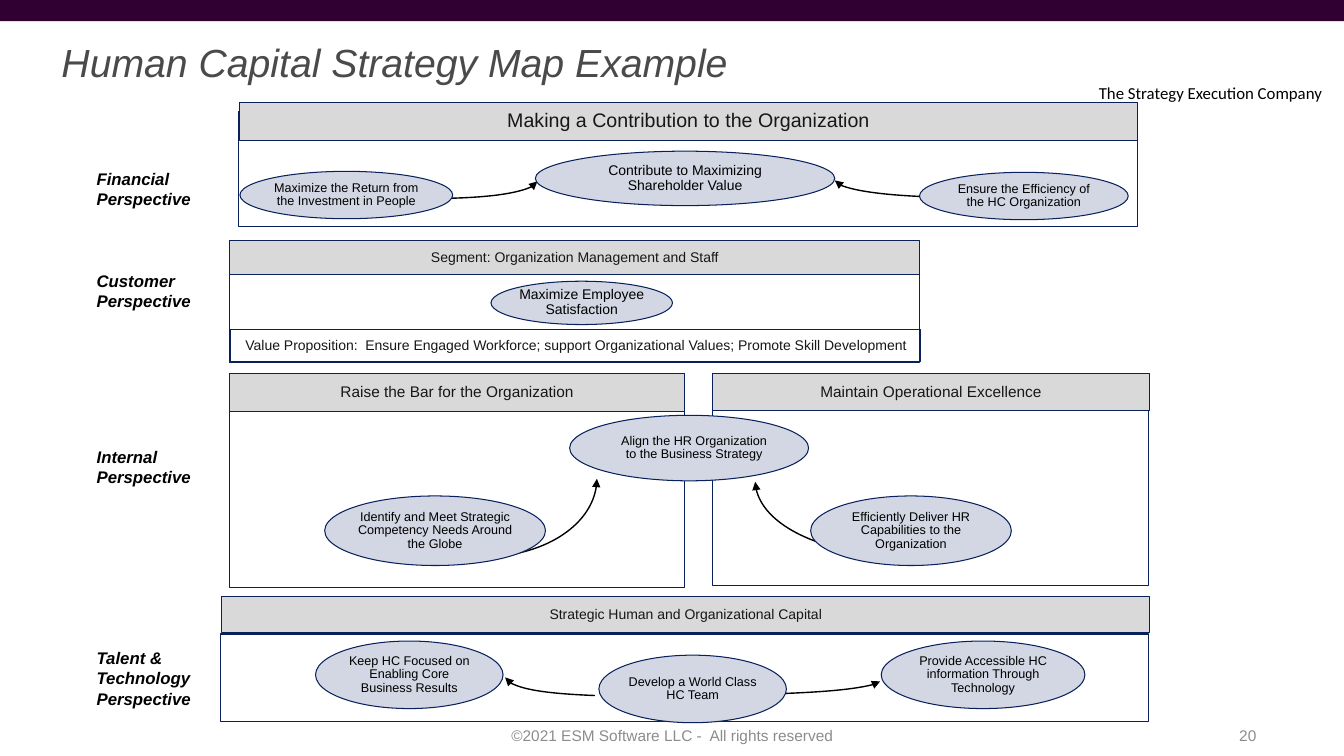
from dataclasses import dataclass
from typing import Optional

from lxml.etree import SubElement
from pptx import Presentation
from pptx.dml.color import RGBColor
from pptx.enum.dml import MSO_LINE
from pptx.enum.shapes import MSO_SHAPE
from pptx.enum.text import MSO_ANCHOR, MSO_AUTO_SIZE, PP_ALIGN
from pptx.oxml.ns import qn
from pptx.shapes.autoshape import Shape
from pptx.slide import Slide
from pptx.util import Pt

PX = 9144  # 100 px to the inch

BLACK = RGBColor(0x00, 0x00, 0x00)
PLUM = RGBColor(0x31, 0x00, 0x32)
NAVY = RGBColor(0x08, 0x20, 0x5C)
LAVENDER = RGBColor(0xD3, 0xD6, 0xE3)
HEADER_GRAY = RGBColor(0xD9, 0xD9, 0xD9)
HEADER_TEXT = RGBColor(0x18, 0x17, 0x17)
TITLE_GRAY = RGBColor(0x4A, 0x4A, 0x4A)
FOOTER_GRAY = RGBColor(0x8C, 0x8C, 0x8C)

Box = tuple[int, int, int, int]
Point = tuple[int, int]


@dataclass(frozen=True)
class TextStyle:
    size: int
    color: RGBColor = BLACK
    font: str = "Arial"
    bold: bool = False
    italic: bool = False
    align: PP_ALIGN = PP_ALIGN.LEFT
    anchor: MSO_ANCHOR = MSO_ANCHOR.TOP
    spacing: float = 1.0
    insets: Box = (10, 5, 10, 5)


@dataclass(frozen=True)
class Panel:
    box: Box


@dataclass(frozen=True)
class Band:
    box: Box
    text: str
    size: int = 10
    fill: Optional[RGBColor] = HEADER_GRAY


@dataclass(frozen=True)
class Objective:
    box: Box
    text: str
    size: int = 9
    left_inset: int = 0


@dataclass(frozen=True)
class Arrow:
    """A Bezier curve: start, two controls, end."""
    start: Point
    control_1: Point
    control_2: Point
    end: Point


@dataclass(frozen=True)
class Caption:
    box: Box
    text: str
    style: TextStyle


TITLE = TextStyle(28, TITLE_GRAY, italic=True, spacing=0.9)
PERSPECTIVE = TextStyle(12, bold=True, italic=True)

PANELS = [
    Panel((237, 111, 891, 114)),
    Panel((228, 240, 684, 120)),
    Panel((228, 400, 451, 183)),
    Panel((707, 396, 432, 185)),
    Panel((219, 629, 920, 87)),
]
BANDS = [
    Band((238, 102, 890, 37), "Making a Contribution to the Organization", 14),
    Band((228, 239, 684, 33), "Segment: Organization Management and Staff"),
    Band((229, 327, 684, 32), "Value Proposition:  Ensure Engaged Workforce; support "
         "Organizational Values; Promote Skill Development", fill=None),
    Band((228, 371, 451, 37), "Raise the Bar for the Organization", 11),
    Band((707, 371, 433, 36), "Maintain Operational Excellence", 11),
    Band((220, 592, 920, 36), "Strategic Human and Organizational Capital"),
]
ARROWS = [
    Arrow((423, 197), (484, 197), (533, 189), (533, 180)),
    Arrow((966, 196), (890, 196), (828, 188), (828, 179)),
    Arrow((474, 553), (539, 553), (592, 518), (592, 475)),
    Arrow((880, 552), (804, 545), (750, 514), (749, 478)),
    Arrow((590, 690), (539, 688), (502, 681), (501, 672)),
    Arrow((777, 688), (830, 686), (873, 680), (873, 676)),
]
OBJECTIVES = [
    Objective((238, 170, 211, 47), "Maximize the Return from the Investment in People"),
    Objective((531, 150, 297, 54), "Contribute to Maximizing Shareholder Value", 10),
    Objective((912, 171, 207, 47), "Ensure the Efficiency of the HC Organization"),
    Objective((487, 279, 180, 43), "Maximize Employee Satisfaction", 10),
    Objective((565, 412, 237, 65), "Align the HR Organization to the Business Strategy",
              left_inset=10),
    Objective((322, 492, 219, 69),
              "Identify and Meet Strategic Competency Needs Around the Globe"),
    Objective((804, 492, 199, 69), "Efficiently Deliver HR Capabilities to the Organization"),
    Objective((313, 636, 186, 67), "Keep HC Focused on Enabling Core Business Results"),
    Objective((594, 650, 186, 67), "Develop a World Class HC Team"),
    Objective((874, 636, 202, 67), "Provide Accessible HC information Through Technology"),
]
CAPTIONS = [
    Caption((86, 162, 147, 50), "Financial Perspective", PERSPECTIVE),
    Caption((86, 264, 147, 50), "Customer Perspective", PERSPECTIVE),
    Caption((86, 438, 158, 50), "Internal Perspective", PERSPECTIVE),
    Caption((86, 638, 158, 70), "Talent & Technology Perspective", PERSPECTIVE),
    Caption((1080, 77, 253, 30), "The Strategy Execution Company",
            TextStyle(12, font="Calibri")),
    Caption((442, 710, 450, 40), "©2021 ESM Software LLC -  All rights reserved",
            TextStyle(11, FOOTER_GRAY, align=PP_ALIGN.CENTER, anchor=MSO_ANCHOR.MIDDLE)),
    Caption((956, 710, 300, 40), "20",
            TextStyle(11, FOOTER_GRAY, align=PP_ALIGN.RIGHT, anchor=MSO_ANCHOR.MIDDLE)),
]


def set_attributes(target: object, values: dict[str, object]) -> None:
    for name, value in values.items():
        setattr(target, name, value)


def to_emu(box: Box) -> list[int]:
    return [length * PX for length in box]


def write_text(shape: Shape, text: str, style: TextStyle) -> None:
    frame = shape.text_frame
    frame.text = text
    left, top, right, bottom = to_emu(style.insets)
    set_attributes(frame, {
        "word_wrap": True, "auto_size": MSO_AUTO_SIZE.NONE, "vertical_anchor": style.anchor,
        "margin_left": left, "margin_top": top, "margin_right": right, "margin_bottom": bottom,
    })
    paragraph = frame.paragraphs[0]
    set_attributes(paragraph, {"alignment": style.align, "line_spacing": style.spacing})
    font = paragraph.runs[0].font
    set_attributes(font, {"name": style.font, "size": Pt(style.size),
                          "bold": style.bold, "italic": style.italic})
    font.color.rgb = style.color


def add_block(slide: Slide, kind: MSO_SHAPE, box: Box, fill: Optional[RGBColor] = None,
              line: Optional[RGBColor] = NAVY) -> Shape:
    shape = slide.shapes.add_shape(kind, *to_emu(box))
    shape.shadow.inherit = False
    if fill is None:
        shape.fill.background()
    else:
        shape.fill.solid()
        shape.fill.fore_color.rgb = fill
    if line is None:
        shape.line.fill.background()
    else:
        shape.line.color.rgb = line
        shape.line.width = Pt(0.75)
    return shape


def add_band(slide: Slide, band: Band) -> None:
    shape = add_block(slide, MSO_SHAPE.RECTANGLE, band.box, band.fill)
    write_text(shape, band.text, TextStyle(
        band.size, HEADER_TEXT, align=PP_ALIGN.CENTER, anchor=MSO_ANCHOR.MIDDLE,
        spacing=0.9, insets=(5, 5, 5, 5)))


def add_objective(slide: Slide, objective: Objective) -> None:
    shape = add_block(slide, MSO_SHAPE.OVAL, objective.box, LAVENDER)
    write_text(shape, objective.text, TextStyle(
        objective.size, align=PP_ALIGN.CENTER, anchor=MSO_ANCHOR.MIDDLE,
        spacing=0.9, insets=(objective.left_inset, 3, 0, 3)))


def add_arrow(slide: Slide, arrow: Arrow) -> None:
    """Turn the three segments of an open freeform into one cubic curve."""
    builder = slide.shapes.build_freeform(*arrow.start, scale=PX)
    builder.add_line_segments([arrow.control_1, arrow.control_2, arrow.end], close=False)
    shape = builder.convert_to_shape()
    outline = next(shape.element.iter(qn("a:path")))
    segments = outline.findall(qn("a:lnTo"))
    curve = SubElement(outline, qn("a:cubicBezTo"))
    for segment in segments:
        curve.append(segment[0])
        outline.remove(segment)
    shape.shadow.inherit = False
    shape.fill.background()
    shape.line.color.rgb = BLACK
    set_attributes(shape.line, {"width": Pt(1), "dash_style": MSO_LINE.SOLID})
    SubElement(shape.line._get_or_add_ln(), qn("a:tailEnd"), type="triangle")


def main() -> None:
    presentation = Presentation()
    set_attributes(presentation, {"slide_width": 1333 * PX, "slide_height": 750 * PX})
    slide = presentation.slides.add_slide(presentation.slide_layouts[5])
    add_block(slide, MSO_SHAPE.RECTANGLE, (0, 0, 1333, 21), PLUM, None)
    title = slide.shapes.title
    set_attributes(title, dict(zip(("left", "top", "width", "height"),
                                   to_emu((51, 38, 925, 50)))))
    write_text(title, "Human Capital Strategy Map Example", TITLE)
    for panel in PANELS:
        add_block(slide, MSO_SHAPE.RECTANGLE, panel.box)
    for band in BANDS:
        add_band(slide, band)
    for arrow in ARROWS:
        add_arrow(slide, arrow)
    for objective in OBJECTIVES:
        add_objective(slide, objective)
    for caption in CAPTIONS:
        write_text(slide.shapes.add_textbox(*to_emu(caption.box)), caption.text, caption.style)
    presentation.save("out.pptx")


if __name__ == "__main__":
    main()
